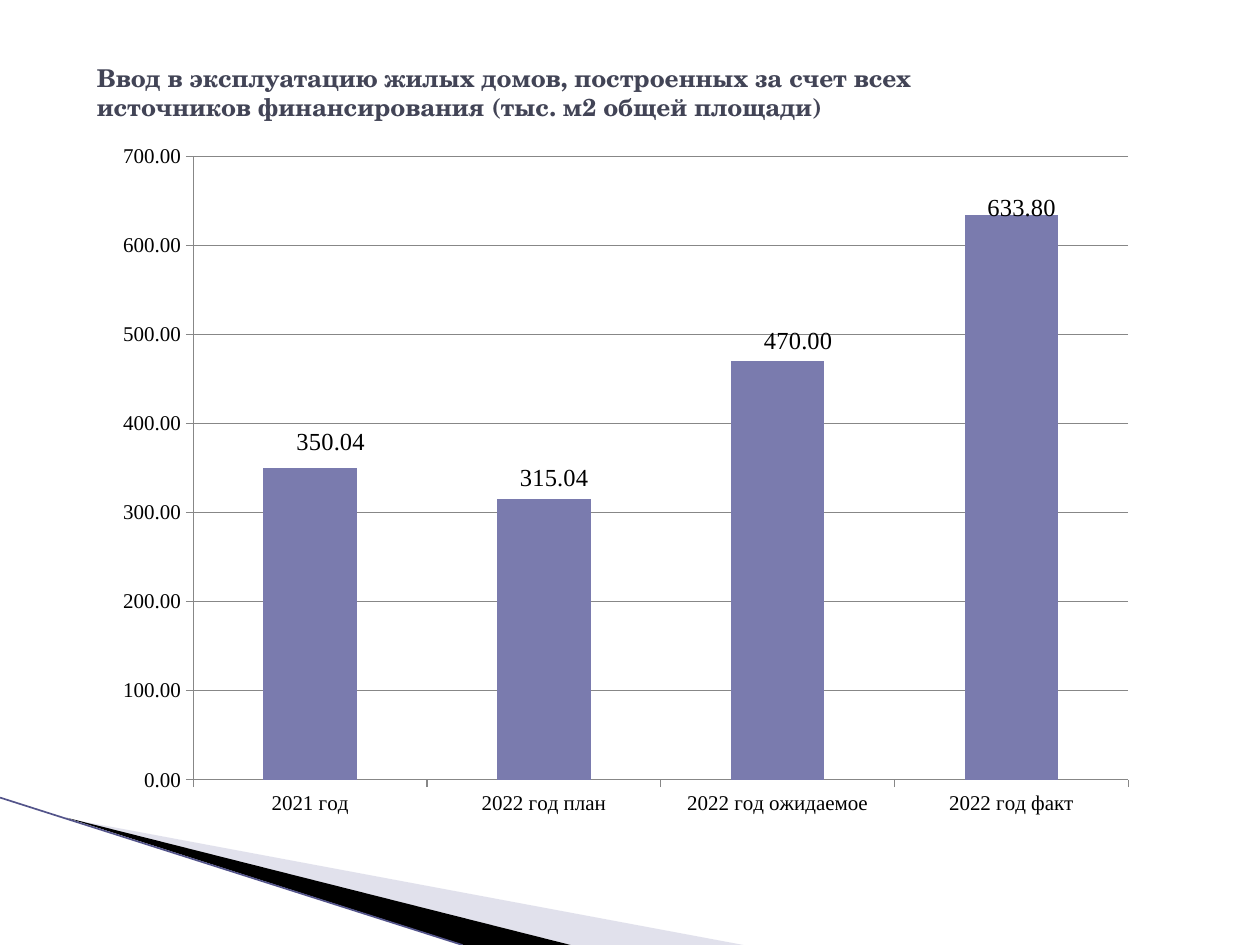
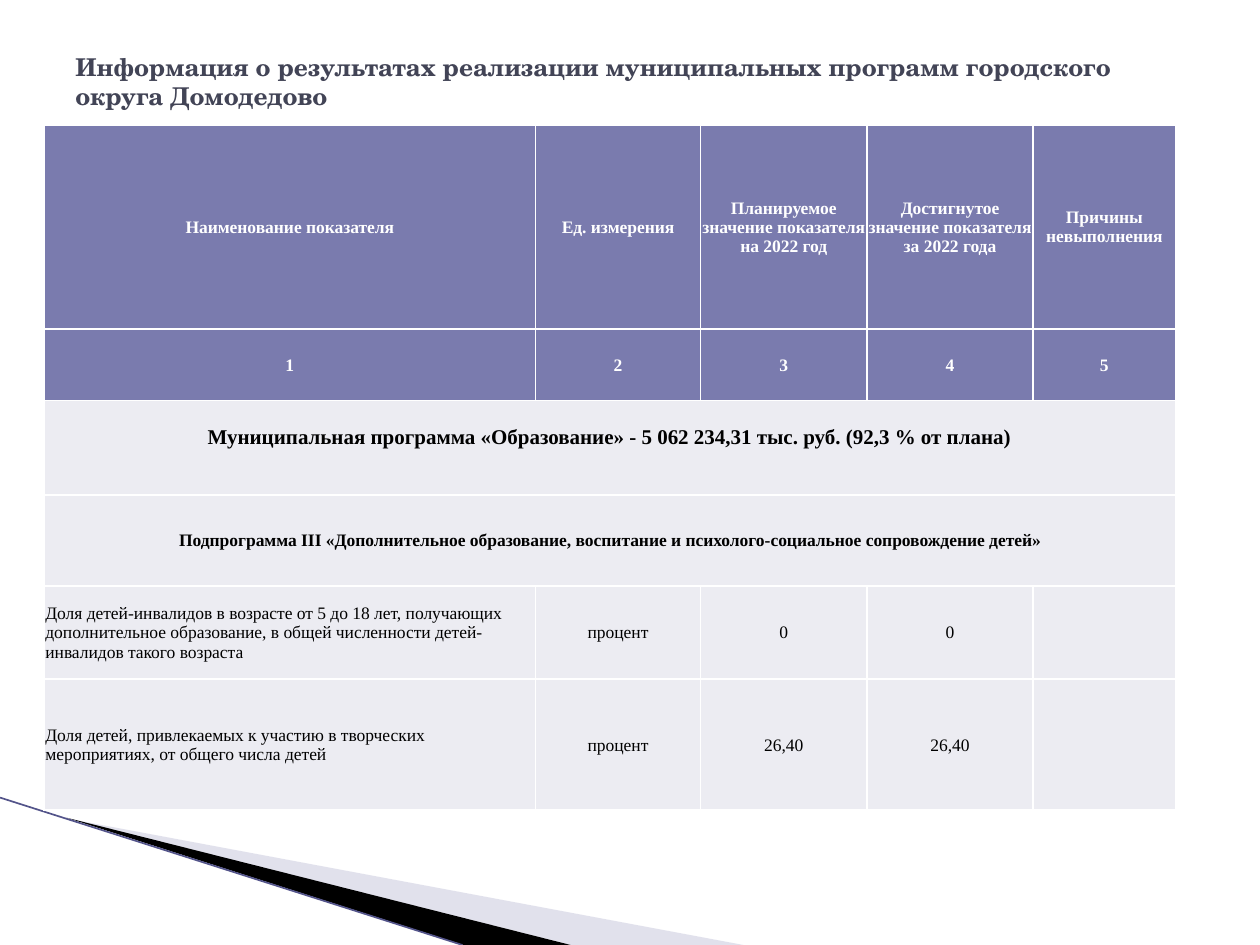
import pptx
import pptx.util
import pptx.oxml
import pptx.oxml.ns
import pptx.chart.data
import pptx.dml.color
import pptx.enum.chart
import pptx.enum.shapes
import pptx.enum.text

Inches = pptx.util.Inches
Pt = pptx.util.Pt
qn = pptx.oxml.ns.qn
ALIGN = pptx.enum.text.PP_ALIGN
MIDDLE = pptx.enum.text.MSO_ANCHOR.MIDDLE

COLORS = {
    "title": "424456", "accent": "7A7BAE", "pale": "ECECF2", "text": "000000",
    "white": "FFFFFF", "wedge": "B6B6D1", "edge": "53548A", "grid": "878787",
}
BODY_FONT = "Times New Roman"
TITLE_FONT = "TeX Gyre Schola"
NUMBER_FORMAT = "#,##0.00"


# Shared helpers
def rgb(name):
    return pptx.dml.color.RGBColor.from_string(COLORS[name])


def set_attributes(target, values):
    for name, value in values.items():
        setattr(target, name, value)


def style_font(font, size, color="text", bold=False, name=BODY_FONT):
    set_attributes(font, {"name": name, "size": Pt(size), "bold": bold})
    font.color.rgb = rgb(color)


def add_child(parent, tag, **attributes):
    child = parent.makeelement(qn(tag), attributes)
    parent.append(child)
    return child


def style_line(line, color, width):
    line.color.rgb = rgb(color)
    line.width = Pt(width)


# Parts found on every slide
def add_wedge(page, points, color, alpha=None):
    corners = [(Inches(x), Inches(y)) for x, y in points]
    builder = page.shapes.build_freeform(*corners[0], scale=1.0)
    builder.add_line_segments(corners[1:], close=True)
    wedge = builder.convert_to_shape()
    wedge.shadow.inherit = False
    wedge.line.fill.background()
    wedge.fill.solid()
    wedge.fill.fore_color.rgb = rgb(color)
    if alpha:
        fill = wedge.fill._xPr.find(qn("a:solidFill"))
        add_child(fill[0], "a:alpha", val=str(alpha * 1000))


def add_corner(page):
    add_wedge(page, [(0.55, 6.5), (5.9, 7.5), (4.53, 7.5)], "wedge", alpha=40)
    add_wedge(page, [(0.53, 6.49), (4.53, 7.5), (3.68, 7.5)], "text")
    edge = page.shapes.add_connector(
        pptx.enum.shapes.MSO_CONNECTOR.STRAIGHT,
        Inches(0), Inches(6.33), Inches(3.67), Inches(7.5))
    style_line(edge.line, "edge", 0.95)
    add_child(edge._element.spPr, "a:effectLst")


def add_title(page, box, text):
    frame = page.shapes.add_textbox(*map(Inches, box)).text_frame
    set_attributes(frame, {"word_wrap": True, "vertical_anchor": MIDDLE})
    span = frame.paragraphs[0].add_run()
    span.text = text
    style_font(span.font, 14, "title", True, TITLE_FONT)


def add_page(deck, title_box, title):
    page = deck.slides.add_slide(deck.slide_layouts[6])
    add_corner(page)
    add_title(page, title_box, title)
    return page


# Chart of commissioned housing
HOUSING = {
    "2021 год": 350.04,
    "2022 год план": 315.04,
    "2022 год ожидаемое": 470,
    "2022 год факт": 633.8,
}
# Label shifts from the bar centre, as fractions of the chart
LABEL_SHIFTS = [(0.02, -0.27), (0.01, -0.24), (0.02, -0.34), (0.01, -0.43)]


def manual_layout(parent, values):
    layout = parent.makeelement(qn("c:layout"), {})
    manual = add_child(layout, "c:manualLayout")
    for name, value in values.items():
        add_child(manual, "c:" + name, val=str(value))
    return layout


def place_label(point, shift):
    label = point.data_label
    style_font(label.font, 14)
    label.position = pptx.enum.chart.XL_LABEL_POSITION.CENTER
    element = label._dLbl
    layout = manual_layout(element, dict(zip("xy", shift)))
    number = element.makeelement(
        qn("c:numFmt"), {"formatCode": NUMBER_FORMAT, "sourceLinked": "0"})
    element.insert(1, layout)
    element.insert(2, number)


def hide_leader_lines(labels):
    element = labels._element
    leader = element.find(qn("c:showLeaderLines"))
    if leader is None:
        leader = add_child(element, "c:showLeaderLines")
    leader.set("val", "0")


def style_axis(axis):
    axis.major_tick_mark = pptx.enum.chart.XL_TICK_MARK.OUTSIDE
    style_font(axis.tick_labels.font, 12)
    style_line(axis.format.line, "grid", 0.75)


def add_housing_chart(page, box):
    data = pptx.chart.data.CategoryChartData(number_format=NUMBER_FORMAT)
    data.categories = list(HOUSING)
    data.add_series("Series 1", list(HOUSING.values()))
    chart = page.shapes.add_chart(
        pptx.enum.chart.XL_CHART_TYPE.COLUMN_STACKED, *map(Inches, box), data).chart
    set_attributes(chart, {"has_legend": False, "has_title": False})
    style_font(chart.font, 18)

    # Axes
    values = chart.value_axis
    for axis in (chart.category_axis, values):
        style_axis(axis)
    chart.category_axis.has_major_gridlines = False
    set_attributes(values, {"minimum_scale": 0, "maximum_scale": 700,
                            "major_unit": 100, "has_major_gridlines": True})
    set_attributes(values.tick_labels, {"number_format": NUMBER_FORMAT,
                                        "number_format_is_linked": False})
    style_line(values.major_gridlines.format.line, "grid", 0.75)

    # Bars and their labels
    plot = chart.plots[0]
    set_attributes(plot, {"gap_width": 150, "overlap": 100, "vary_by_categories": False})
    bars = plot.series[0]
    bars.format.fill.solid()
    bars.format.fill.fore_color.rgb = rgb("accent")
    labels = bars.data_labels
    set_attributes(labels, {"show_value": True, "number_format": NUMBER_FORMAT,
                            "number_format_is_linked": False})
    style_font(labels.font, 14)
    for index, shift in enumerate(LABEL_SHIFTS):
        place_label(bars.points[index], shift)
    hide_leader_lines(labels)

    # Inner plot area
    area = chart._chartSpace.chart.plotArea
    for old in area.findall(qn("c:layout")):
        area.remove(old)
    area.insert(0, manual_layout(area, {
        "layoutTarget": "inner", "xMode": "edge", "yMode": "edge",
        "x": 0.086, "y": 0.017, "w": 0.906, "h": 0.925}))


# Table of programme results
COLUMN_WIDTHS = [3.9, 1.31, 1.32, 1.32, 1.13]
ROW_HEIGHTS = [1.62, 0.57, 0.75, 0.72, 0.74, 1.04]
HEADER_ROWS = 2
PROGRAM_ROW = 2
RESULTS = [
    ["Наименование показателя", "Ед. измерения",
     "Планируемое значение показателя на 2022 год",
     "Достигнутое значение показателя за 2022 года", "Причины невыполнения"],
    ["1", "2", "3", "4", "5"],
    ["Муниципальная программа «Образование» - 5 062 234,31 тыс. руб. (92,3 % от плана)"],
    ["Подпрограмма III «Дополнительное образование, воспитание и "
     "психолого-социальное сопровождение детей»"],
    ["Доля детей-инвалидов в возрасте от 5 до 18 лет, получающих дополнительное "
     "образование, в общей численности детей-инвалидов такого возраста",
     "процент", "0", "0", ""],
    ["Доля детей, привлекаемых к участию в творческих мероприятиях, "
     "от общего числа детей", "процент", "26,40", "26,40", ""],
]


def add_borders(cell):
    properties = cell._tc.get_or_add_tcPr()
    for index, side in enumerate(("a:lnL", "a:lnR", "a:lnT", "a:lnB")):
        border = properties.makeelement(qn(side), {"w": str(Pt(1))})
        fill = add_child(border, "a:solidFill")
        add_child(fill, "a:srgbClr", val=COLORS["white"])
        properties.insert(index, border)


def fill_cell(cell, text, size, color, bold, align):
    set_attributes(cell, {"vertical_anchor": MIDDLE, "margin_left": Inches(0.01),
                          "margin_right": Inches(0.01), "margin_top": Inches(0.01),
                          "margin_bottom": 0})
    para = cell.text_frame.paragraphs[0]
    para.alignment = align
    style_font(para.font, size, color, bold)
    if text:
        span = para.add_run()
        span.text = text
        style_font(span.font, size, color, bold)


def add_results_table(page, box):
    frame = page.shapes.add_table(
        len(ROW_HEIGHTS), len(COLUMN_WIDTHS), *map(Inches, box))
    table = frame.table
    set_attributes(table, {"first_row": False, "horz_banding": False})
    for column, width in zip(table.columns, COLUMN_WIDTHS):
        column.width = Inches(width)
    for row, height in zip(table.rows, ROW_HEIGHTS):
        row.height = Inches(height)

    for r, texts in enumerate(RESULTS):
        header, section = r < HEADER_ROWS, len(texts) == 1
        for c in range(len(COLUMN_WIDTHS)):
            cell = table.cell(r, c)
            cell.fill.solid()
            cell.fill.fore_color.rgb = rgb("accent" if header else "pale")
            add_borders(cell)
        if section:
            table.cell(r, 0).merge(table.cell(r, len(COLUMN_WIDTHS) - 1))
        for c, text in enumerate(texts):
            indicator = c == 0 and not (header or section)
            fill_cell(table.cell(r, c), text, 12 if r == PROGRAM_ROW else 10,
                      "white" if header else "text", header or section,
                      ALIGN.LEFT if indicator else ALIGN.CENTER)
    table.cell(PROGRAM_ROW, 0).margin_bottom = Inches(0.18)


# Slides
def add_housing_page(deck):
    page = add_page(deck, (0.67, 0.44, 6.75, 0.58),
                    "Ввод в эксплуатацию жилых домов, построенных за счет всех "
                    "источников финансирования (тыс. м2 общей площади)")
    add_housing_chart(page, (0.83, 1.15, 8.19, 5.35))


def add_results_page(deck):
    page = add_page(deck, (0.5, 0.3, 9, 0.69),
                    "Информация о результатах реализации муниципальных программ "
                    "городского округа Домодедово")
    add_results_table(page, (0.35, 0.99, sum(COLUMN_WIDTHS), sum(ROW_HEIGHTS)))


def main():
    deck = pptx.Presentation()
    set_attributes(deck, {"slide_width": Inches(10), "slide_height": Inches(7.5)})
    add_housing_page(deck)
    add_results_page(deck)
    deck.save("out.pptx")


if __name__ == "__main__":
    main()
